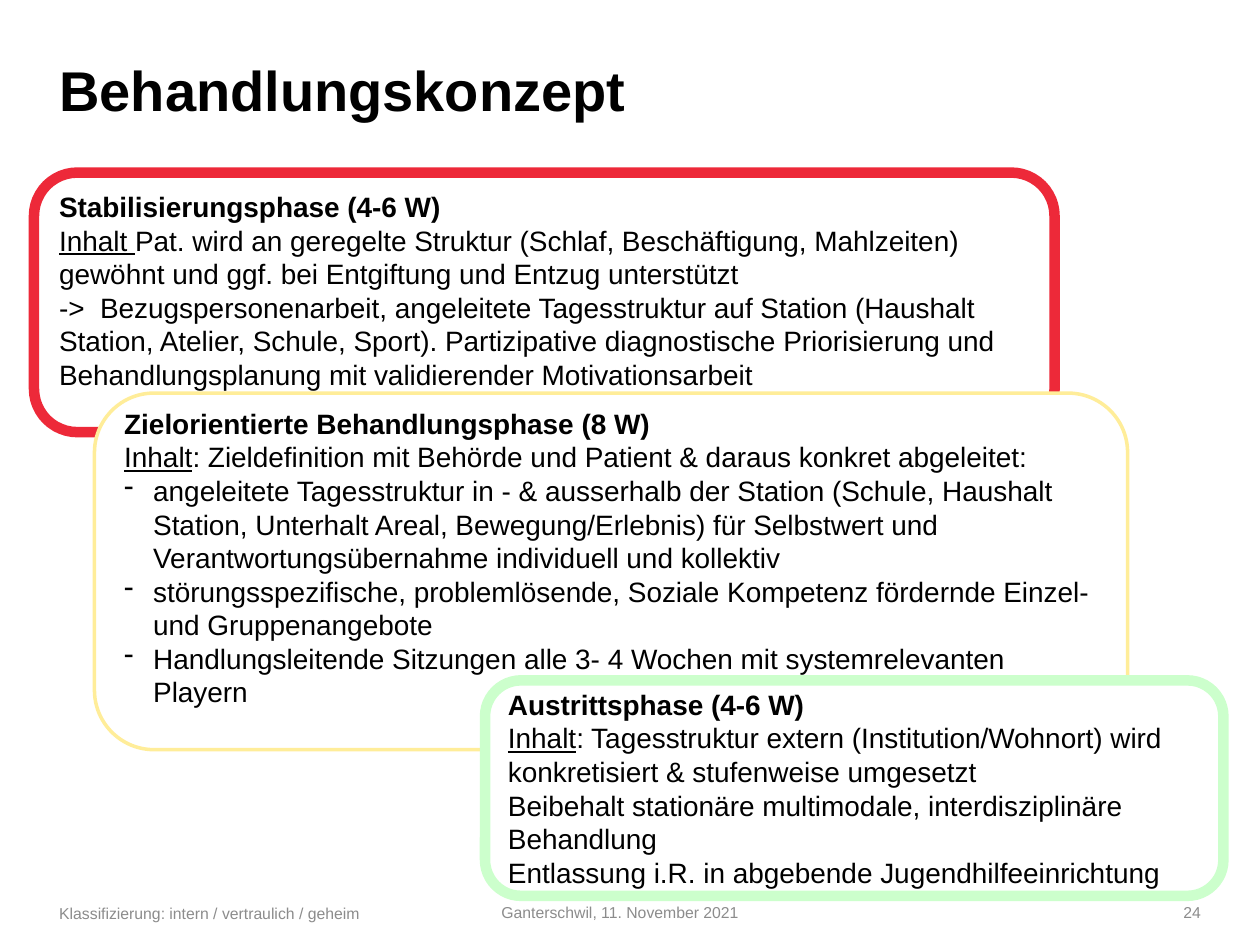
import pptx
import pptx.util
import pptx.dml.color
import pptx.enum.shapes
import pptx.enum.text
import pptx.oxml.ns
import lxml.etree

Inches = pptx.util.Inches
Pt = pptx.util.Pt
RGBColor = pptx.dml.color.RGBColor
PP_ALIGN = pptx.enum.text.PP_ALIGN
ANCHOR = pptx.enum.text.MSO_ANCHOR

BLACK = RGBColor(0x00, 0x00, 0x00)
WHITE = RGBColor(0xFF, 0xFF, 0xFF)
GREY = RGBColor(0x8C, 0x8C, 0x8C)
RED = RGBColor(0xED, 0x29, 0x39)
YELLOW = RGBColor(0xFF, 0xED, 0x99)
GREEN = RGBColor(0xCC, 0xFF, 0xCC)

FONT = "Arial"
DASH_INDENT = Inches(0.23)

# Each phase: left, top, width, height, outline, outline points, bottom inset,
# heading, text after the underlined word, plain paragraphs, dashed paragraphs
PHASES = [
    (0.27, 1.37, 8.1, 2.06, RED, 6, 0.24,
     "Stabilisierungsphase (4-6 W)",
     ("Inhalt ", "Pat. wird an geregelte Struktur (Schlaf, Beschäftigung, Mahlzeiten) "
      "gewöhnt und ggf. bei Entgiftung und Entzug unterstützt"),
     ["->  Bezugspersonenarbeit, angeleitete Tagesstruktur auf Station (Haushalt "
      "Station, Atelier, Schule, Sport). Partizipative diagnostische Priorisierung "
      "und Behandlungsplanung mit validierender Motivationsarbeit"],
     []),
    (0.75, 3.12, 8.2, 2.83, YELLOW, 2, 0.27,
     "Zielorientierte Behandlungsphase (8 W)",
     ("Inhalt", ": Zieldefinition mit Behörde und Patient & daraus konkret abgeleitet:"),
     [],
     ["angeleitete Tagesstruktur in - & ausserhalb der Station (Schule, Haushalt "
      "Station, Unterhalt Areal, Bewegung/Erlebnis) für Selbstwert und "
      "Verantwortungsübernahme individuell und kollektiv",
      "störungsspezifische, problemlösende, Soziale Kompetenz fördernde "
      "Einzel- und Gruppenangebote",
      "Handlungsleitende Sitzungen alle 3- 4 Wochen mit systemrelevanten Playern"]),
    (3.85, 5.4, 5.86, 1.71, GREEN, 6, 0.05,
     "Austrittsphase (4-6 W)",
     ("Inhalt", ": Tagesstruktur extern (Institution/Wohnort) wird konkretisiert "
      "& stufenweise umgesetzt"),
     ["Beibehalt stationäre multimodale, interdisziplinäre Behandlung",
      "Entlassung i.R. in abgebende Jugendhilfeeinrichtung"],
     []),
]


def add_run(paragraph, text, size=16, color=BLACK, bold=False, underline=False):
    run = paragraph.add_run()
    run.text = text
    run.font.name = FONT
    run.font.size = Pt(size)
    run.font.color.rgb = color
    run.font.bold = bold
    run.font.underline = underline


def add_label(slide, box, text, size, color, bold=False, align=PP_ALIGN.LEFT,
              anchor=ANCHOR.MIDDLE, inset=0.05):
    """Add a single line of text without side insets."""
    frame = slide.shapes.add_textbox(*map(Inches, box)).text_frame
    frame.word_wrap = True
    frame.vertical_anchor = anchor
    frame.margin_left = frame.margin_right = 0
    frame.margin_top = frame.margin_bottom = Inches(inset)
    paragraph = frame.paragraphs[0]
    paragraph.alignment = align
    add_run(paragraph, text, size, color, bold)


def add_dash(paragraph):
    """Give the paragraph a hanging dash as its bullet."""
    properties = paragraph._p.get_or_add_pPr()
    properties.set("marL", str(DASH_INDENT))
    properties.set("indent", str(-DASH_INDENT))
    bullet = lxml.etree.SubElement(properties, pptx.oxml.ns.qn("a:buChar"))
    bullet.set("char", "-")


def add_phase(slide, left, top, width, height, outline, outline_width,
              bottom_inset, heading, content, statements, dashed):
    panel = slide.shapes.add_shape(
        pptx.enum.shapes.MSO_SHAPE.ROUNDED_RECTANGLE,
        Inches(left), Inches(top), Inches(width), Inches(height))
    panel.shadow.inherit = False
    panel.fill.solid()
    panel.fill.fore_color.rgb = WHITE
    panel.line.color.rgb = outline
    panel.line.width = Pt(outline_width)

    frame = panel.text_frame
    frame.word_wrap = True
    frame.vertical_anchor = ANCHOR.MIDDLE
    frame.margin_bottom = Inches(bottom_inset)

    add_run(frame.paragraphs[0], heading, bold=True)
    introduction = frame.add_paragraph()
    keyword, explanation = content
    add_run(introduction, keyword, underline=True)
    add_run(introduction, explanation)
    for statement in statements:
        add_run(frame.add_paragraph(), statement)
    for item in dashed:
        paragraph = frame.add_paragraph()
        add_dash(paragraph)
        add_run(paragraph, item)
    for paragraph in frame.paragraphs:
        paragraph.alignment = PP_ALIGN.LEFT


def add_footer(slide):
    add_label(slide, (3.98, 7.11, 2.81, 0.26), "Ganterschwil, 11. November 2021", 9, GREY)
    add_label(slide, (0.47, 7.04, 3.51, 0.41),
              "Klassifizierung: intern / vertraulich / geheim", 9, GREY)
    add_label(slide, (8.35, 7.11, 1.18, 0.26), "24", 9, GREY, align=PP_ALIGN.RIGHT)


def main():
    presentation = pptx.Presentation()
    presentation.slide_width = Inches(10)
    presentation.slide_height = Inches(7.5)
    slide = presentation.slides.add_slide(presentation.slide_layouts[6])
    add_label(slide, (0.47, 0.44, 4.95, 0.51), "Behandlungskonzept", 32, BLACK,
              bold=True, anchor=ANCHOR.TOP, inset=0)
    add_footer(slide)
    for phase in PHASES:
        add_phase(slide, *phase)
    presentation.save("out.pptx")


if __name__ == "__main__":
    main()
